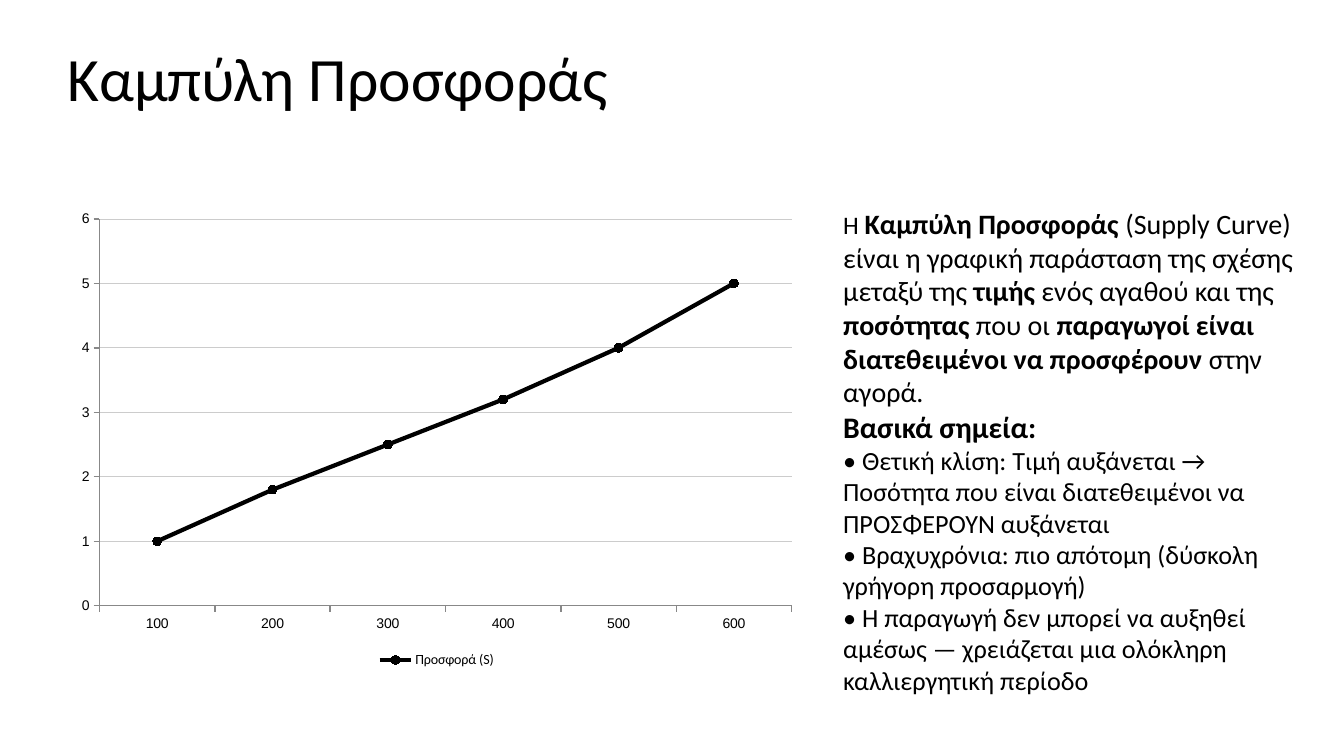
"""Build a slide that shows the supply curve beside its explanation."""
import dataclasses
import typing

import pptx
import pptx.chart.data
import pptx.dml.color
import pptx.enum.chart
import pptx.enum.text
import pptx.util

Pt = pptx.util.Pt


def paint(code):
    return pptx.dml.color.RGBColor.from_string(code)


def style(font, size, face="Calibri", bold=False, color="000000"):
    font.name = face
    font.size = Pt(size)
    font.bold = bold
    font.color.rgb = paint(color)


def write(para, text, **form):
    run = para.add_run()
    run.text = text
    style(run.font, **form)


@dataclasses.dataclass
class Page:
    slide: typing.Any
    ink: str = "000000"
    edge: str = "888888"
    grid: str = "CCCCCC"

    def place(self, shape, box):
        shape.left, shape.top, shape.width, shape.height = map(Pt, box)

    def frame(self, shape, inset=None):
        frame = shape.text_frame
        frame.word_wrap = True
        frame.auto_size = pptx.enum.text.MSO_AUTO_SIZE.NONE
        frame.vertical_anchor = pptx.enum.text.MSO_ANCHOR.TOP
        if inset is not None:
            frame.margin_left = frame.margin_right = Pt(inset)
            frame.margin_top = frame.margin_bottom = Pt(inset)
        return frame

    def title(self, text, box):
        shape = self.slide.shapes.title
        self.place(shape, box)
        para = self.frame(shape, 0).paragraphs[0]
        para.alignment = pptx.enum.text.PP_ALIGN.LEFT
        write(para, text, size=44, color=self.ink)

    def text(self, paras, box):
        shape = self.slide.shapes.add_textbox(*map(Pt, box))
        frame = self.frame(shape)
        for i, runs in enumerate(paras):
            para = frame.add_paragraph() if i else frame.paragraphs[0]
            for text, size, bold in runs:
                write(para, text, size=size, bold=bold, color=self.ink)

    def axis(self, axis):
        style(axis.tick_labels.font, 10, "Arial", color=self.ink)
        axis.major_tick_mark = pptx.enum.chart.XL_TICK_MARK.OUTSIDE
        axis.minor_tick_mark = pptx.enum.chart.XL_TICK_MARK.NONE
        axis.format.line.color.rgb = paint(self.edge)
        axis.format.line.width = Pt(1)

    def chart(self, name, cats, vals, box):
        data = pptx.chart.data.CategoryChartData()
        data.categories = cats
        data.add_series(name, vals)
        kind = pptx.enum.chart.XL_CHART_TYPE.LINE_MARKERS
        chart = self.slide.shapes.add_chart(kind, *map(Pt, box), data).chart
        style(chart.font, 10, color=self.ink)
        chart.has_title = False
        chart.has_legend = True
        chart.legend.position = pptx.enum.chart.XL_LEGEND_POSITION.BOTTOM
        chart.legend.include_in_layout = False
        style(chart.legend.font, 10, color=self.ink)

        self.axis(chart.category_axis)
        scale = chart.value_axis
        self.axis(scale)
        scale.minimum_scale, scale.maximum_scale, scale.major_unit = 0, 6, 1
        scale.has_major_gridlines = True
        scale.major_gridlines.format.line.color.rgb = paint(self.grid)
        scale.major_gridlines.format.line.width = Pt(0.5)

        plot = chart.plots[0]
        plot.vary_by_categories = False
        curve = plot.series[0]
        curve.smooth = False
        curve.format.line.color.rgb = paint(self.ink)
        curve.format.line.width = Pt(3)
        curve.marker.style = pptx.enum.chart.XL_MARKER_STYLE.CIRCLE
        curve.marker.size = 6
        dot = curve.marker.format
        dot.fill.solid()
        dot.fill.fore_color.rgb = paint(self.ink)
        dot.line.color.rgb = paint(self.ink)


def main():
    deck = pptx.Presentation()
    deck.slide_width, deck.slide_height = Pt(960), Pt(540)
    page = Page(deck.slides.add_slide(deck.slide_layouts[5]))
    page.title("Καμπύλη Προσφοράς", (48, 28.8, 864, 115.2))
    cats = [str(n) for n in range(100, 700, 100)]
    vals = (1, 1.8, 2.5, 3.2, 4, 5)
    page.chart("Προσφορά (S)", cats, vals, (48, 144, 528, 336))
    intro = [
        ("Η ", 18, False),
        ("Καμπύλη Προσφοράς", 20, True),
        (" (Supply Curve) είναι η γραφική παράσταση της σχέσης μεταξύ της ", 20, False),
        ("τιμής", 20, True),
        (" ενός αγαθού και της ", 20, False),
        ("ποσότητας", 20, True),
        (" που οι ", 20, False),
        ("παραγωγοί είναι διατεθειμένοι να προσφέρουν ", 20, True),
        ("στην αγορά.", 20, False),
    ]
    points = [
        "• Θετική κλίση: Τιμή αυξάνεται → Ποσότητα που είναι διατεθειμένοι να ΠΡΟΣΦΕΡΟΥΝ αυξάνεται",
        "• Βραχυχρόνια: πιο απότομη (δύσκολη γρήγορη προσαρμογή)",
        "• Η παραγωγή δεν μπορεί να αυξηθεί αμέσως — χρειάζεται μια ολόκληρη καλλιεργητική περίοδο",
    ]
    paras = [intro, [("Βασικά σημεία:", 21.3, True)]]
    paras += [[(point, 18.7, False)] for point in points]
    page.text(paras, (595.2, 144, 336, 336))
    deck.save("out.pptx")


if __name__ == "__main__":
    main()
